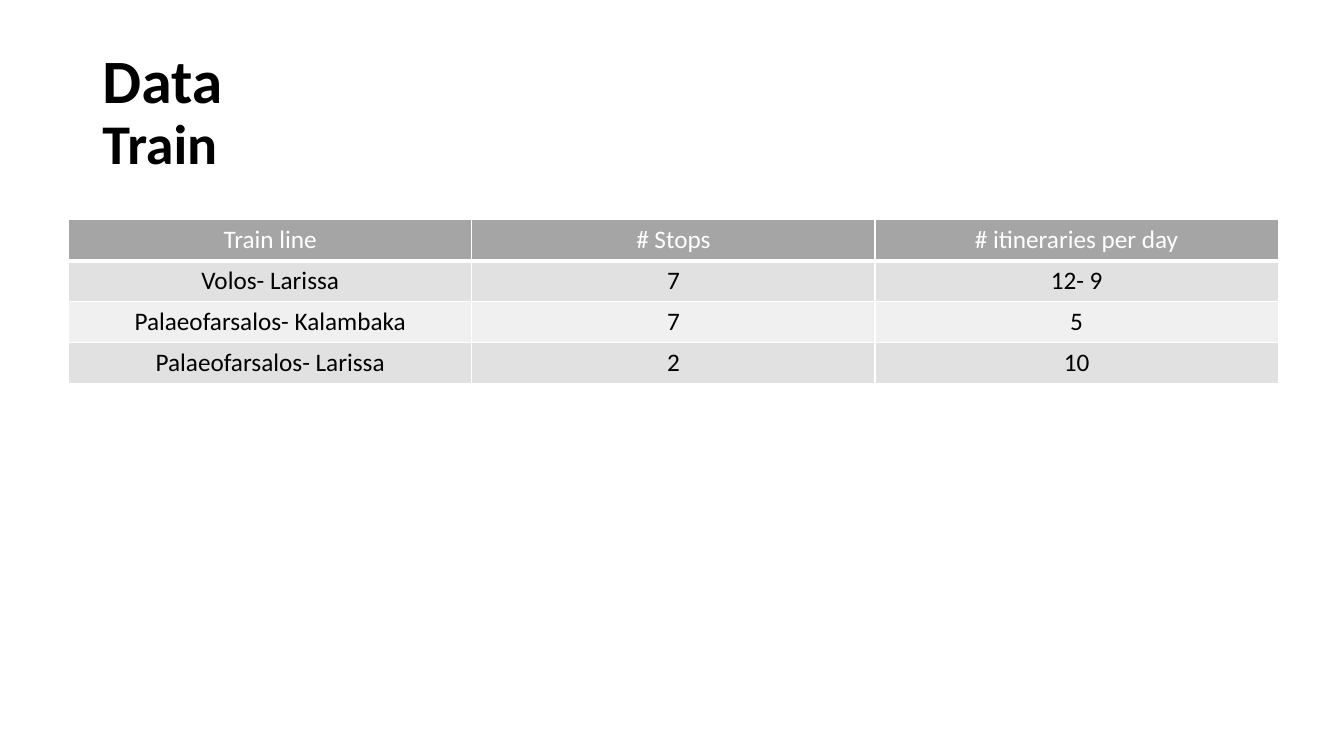
from dataclasses import dataclass

import lxml.etree
import pptx
import pptx.dml.color
import pptx.enum.text
import pptx.oxml.ns
import pptx.table
import pptx.text.text
import pptx.util

Pt = pptx.util.Pt
RGBColor = pptx.dml.color.RGBColor

BLACK = RGBColor(0x00, 0x00, 0x00)
WHITE = RGBColor(0xFF, 0xFF, 0xFF)
HEADER_GREY = RGBColor(0xA5, 0xA5, 0xA5)
DARK_BAND = RGBColor(0xE1, 0xE1, 0xE1)
LIGHT_BAND = RGBColor(0xF0, 0xF0, 0xF0)

FONT = "Calibri"
COLUMN_WIDTH = Pt(288)
ROW_HEIGHT = Pt(29.2)
TITLE_SIZES = (44, 40)


@dataclass(frozen=True)
class TableRow:
    texts: tuple[str, str, str]
    fill: RGBColor
    color: RGBColor = BLACK
    bottom_border: float = 1


ROWS = (
    TableRow(("Train line", "# Stops", "# itineraries per day"), HEADER_GREY, WHITE, 3),
    TableRow(("Volos- Larissa", "7", "12- 9"), DARK_BAND),
    TableRow(("Palaeofarsalos- Kalambaka", "7", "5"), LIGHT_BAND),
    TableRow(("Palaeofarsalos- Larissa", "2", "10"), DARK_BAND),
)


def format_span(span: pptx.text.text._Run, size: float, color: RGBColor, bold: bool) -> None:
    span.font.name = FONT
    span.font.size = Pt(size)
    span.font.bold = bold
    span.font.color.rgb = color


def add_border(cell: pptx.table._Cell, side: str, width: float) -> None:
    qn = pptx.oxml.ns.qn
    properties = cell._tc.get_or_add_tcPr()
    line = lxml.etree.SubElement(properties, qn(f"a:ln{side}"), w=str(Pt(width)))
    fill = lxml.etree.SubElement(line, qn("a:solidFill"))
    lxml.etree.SubElement(fill, qn("a:srgbClr"), val=str(WHITE))


def fill_cell(cell: pptx.table._Cell, text: str, row: TableRow) -> None:
    # Borders go before the fill in the cell properties
    for side in "LRT":
        add_border(cell, side, 1)
    add_border(cell, "B", row.bottom_border)
    cell.fill.solid()
    cell.fill.fore_color.rgb = row.fill
    cell.margin_left = cell.margin_right = Pt(9.36)
    cell.margin_top = cell.margin_bottom = Pt(3.6)
    para = cell.text_frame.paragraphs[0]
    para.text = text
    para.alignment = pptx.enum.text.PP_ALIGN.CENTER
    format_span(para.runs[0], 18, row.color, False)


def main() -> None:
    deck = pptx.Presentation()
    deck.slide_width, deck.slide_height = Pt(960), Pt(540)
    page = deck.slides.add_slide(deck.slide_layouts[5])

    # Title
    title = page.shapes.title
    title.left, title.top, title.width, title.height = Pt(66), Pt(28.75), Pt(828), Pt(104.4)
    frame = title.text_frame
    frame.word_wrap = True
    frame.auto_size = pptx.enum.text.MSO_AUTO_SIZE.NONE
    frame.vertical_anchor = pptx.enum.text.MSO_ANCHOR.MIDDLE
    para = frame.paragraphs[0]
    para.text = "Data\vTrain"
    para.alignment = pptx.enum.text.PP_ALIGN.LEFT
    para.line_spacing = 0.9
    for span, size in zip(para.runs, TITLE_SIZES):
        format_span(span, size, BLACK, True)

    # Train timetable
    column_count = len(ROWS[0].texts)
    table = page.shapes.add_table(
        len(ROWS), column_count, Pt(49), Pt(157),
        COLUMN_WIDTH * column_count, ROW_HEIGHT * len(ROWS),
    ).table
    for column in table.columns:
        column.width = COLUMN_WIDTH
    for table_row, row in zip(table.rows, ROWS):
        table_row.height = ROW_HEIGHT
        for cell, text in zip(table_row.cells, row.texts):
            fill_cell(cell, text, row)

    deck.save("out.pptx")


if __name__ == "__main__":
    main()
